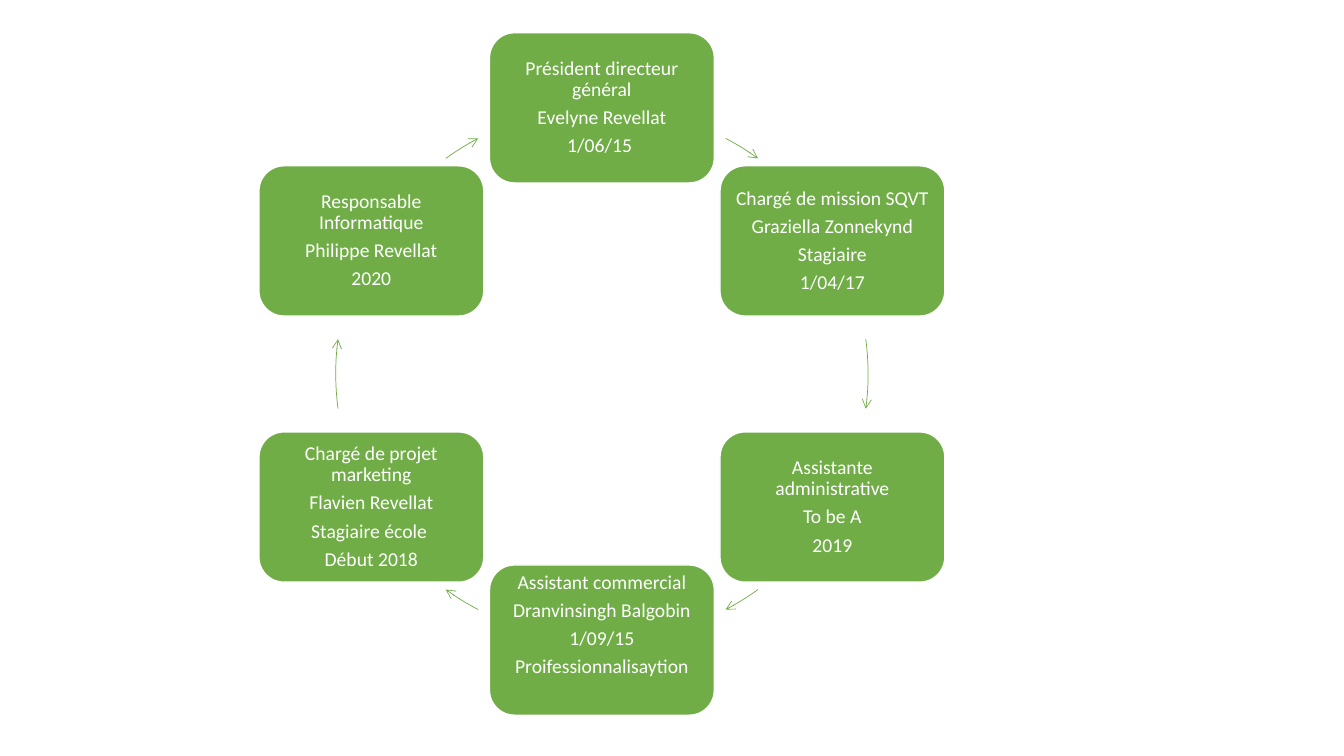
"""Build a slide with a six-step cycle of team members joined by curved arrows."""
import math
from dataclasses import dataclass

import pptx
import pptx.dml.color
import pptx.enum.shapes
import pptx.enum.text
import pptx.oxml
import pptx.oxml.ns
import pptx.presentation
import pptx.shapes.autoshape
import pptx.slide
import pptx.util
from pptx.util import Inches

SHAPE = pptx.enum.shapes.MSO_SHAPE
ANCHOR = pptx.enum.text.MSO_ANCHOR


@dataclass(frozen=True)
class Theme:
    """Colours, font and sizes of the slide."""
    green: pptx.dml.color.RGBColor = pptx.dml.color.RGBColor(0x70, 0xAD, 0x47)
    white: pptx.dml.color.RGBColor = pptx.dml.color.RGBColor(0xFF, 0xFF, 0xFF)
    font: str = "Calibri"
    size: float = 14
    space_after: float = 4.9
    box_line: float = 1
    arrow_line: float = 0.5


@dataclass(frozen=True)
class Cycle:
    """Circle and box dimensions in inches."""
    cx: float = 5.97
    cy: float = 3.71
    radius: float = 2.64
    box_w: float = 2.23
    box_h: float = 1.49


@dataclass(frozen=True)
class Member:
    """Lines of one box and the way they are anchored."""
    lines: tuple[str, ...]
    anchor: ANCHOR = ANCHOR.MIDDLE
    top_inset: float = 0.06


@dataclass(frozen=True)
class Arc:
    """Arrow centred on an angle, in degrees clockwise from the top."""
    middle: float
    half: float


THEME = Theme()
CYCLE = Cycle()
MEMBERS = (
    Member(("Président directeur général", "Evelyne Revellat", "1/06/15 ")),
    Member(("Chargé de mission SQVT", "Graziella Zonnekynd", "Stagiaire", "1/04/17")),
    Member(("Assistante administrative", "To be A", "2019")),
    Member(("Assistant commercial", "Dranvinsingh Balgobin", "1/09/15",
            "Proifessionnalisaytion"), anchor=ANCHOR.TOP, top_inset=0),
    Member(("Chargé de projet marketing", "Flavien Revellat", "Stagiaire école ", "Début 2018")),
    Member(("Responsable Informatique", "Philippe Revellat", "2020")),
)
HALF_CIRCLE_ARCS = (Arc(31.8, 4.1), Arc(90, 7.5), Arc(148.2, 4.1))


def write_text(sp: pptx.shapes.autoshape.Shape, lines: tuple[str, ...], *,
               size: float, color: pptx.dml.color.RGBColor, font: str,
               anchor: ANCHOR, top_inset: float, inset: float = 0.06) -> None:
    """Write centred paragraphs into a shape."""
    tf = sp.text_frame
    tf.word_wrap = True
    tf.vertical_anchor = anchor
    tf.margin_left = tf.margin_right = tf.margin_bottom = Inches(inset)
    tf.margin_top = Inches(top_inset)
    for i, line in enumerate(lines):
        p = tf.paragraphs[0] if i == 0 else tf.add_paragraph()
        p.alignment = pptx.enum.text.PP_ALIGN.CENTER
        p.line_spacing = 0.9
        p.space_after = pptx.util.Pt(THEME.space_after)
        r = p.add_run()
        r.text = line
        r.font.name = font
        r.font.size = pptx.util.Pt(size)
        r.font.color.rgb = color


def add_member(slide: pptx.slide.Slide, member: Member, angle: float) -> None:
    """Draw a rounded box centred on the circle at the given angle."""
    x = CYCLE.cx + CYCLE.radius * math.sin(math.radians(angle))
    y = CYCLE.cy - CYCLE.radius * math.cos(math.radians(angle))
    sp = slide.shapes.add_shape(
        SHAPE.ROUNDED_RECTANGLE,
        Inches(x - CYCLE.box_w / 2), Inches(y - CYCLE.box_h / 2),
        Inches(CYCLE.box_w), Inches(CYCLE.box_h))
    sp.shadow.inherit = False
    sp.fill.solid()
    sp.fill.fore_color.rgb = THEME.green
    sp.line.color.rgb = THEME.white
    sp.line.width = pptx.util.Pt(THEME.box_line)
    write_text(sp, member.lines, size=THEME.size, color=THEME.white, font=THEME.font,
               anchor=member.anchor, top_inset=member.top_inset)


def add_arc(slide: pptx.slide.Slide, arc: Arc, turn: float) -> None:
    """Draw a clockwise arc arrow on the circle."""
    side = Inches(2 * CYCLE.radius)
    sp = slide.shapes.add_shape(
        SHAPE.ARC, Inches(CYCLE.cx - CYCLE.radius), Inches(CYCLE.cy - CYCLE.radius), side, side)
    for i, edge in enumerate((-arc.half, arc.half)):
        sp.adjustments[i] = (arc.middle + turn + edge - 90) % 360 * 0.6
    sp.shadow.inherit = False
    sp.fill.background()
    sp.line.color.rgb = THEME.green
    sp.line.width = pptx.util.Pt(THEME.arrow_line)
    ns = pptx.oxml.ns.nsdecls("a")
    ln = sp.line._get_or_add_ln()
    ln.append(pptx.oxml.parse_xml(f'<a:tailEnd {ns} type="arrow"/>'))


def build() -> pptx.presentation.Presentation:
    """Return the finished presentation."""
    prs = pptx.Presentation()
    prs.slide_width, prs.slide_height = Inches(13.33), Inches(7.5)
    slide = prs.slides.add_slide(prs.slide_layouts[6])
    arrows = [(arc, turn) for turn in (0, 180) for arc in HALF_CIRCLE_ARCS]
    for i, (member, (arc, turn)) in enumerate(zip(MEMBERS, arrows)):
        add_member(slide, member, i * 360 / len(MEMBERS))
        add_arc(slide, arc, turn)
    return prs


if __name__ == "__main__":
    build().save("out.pptx")
